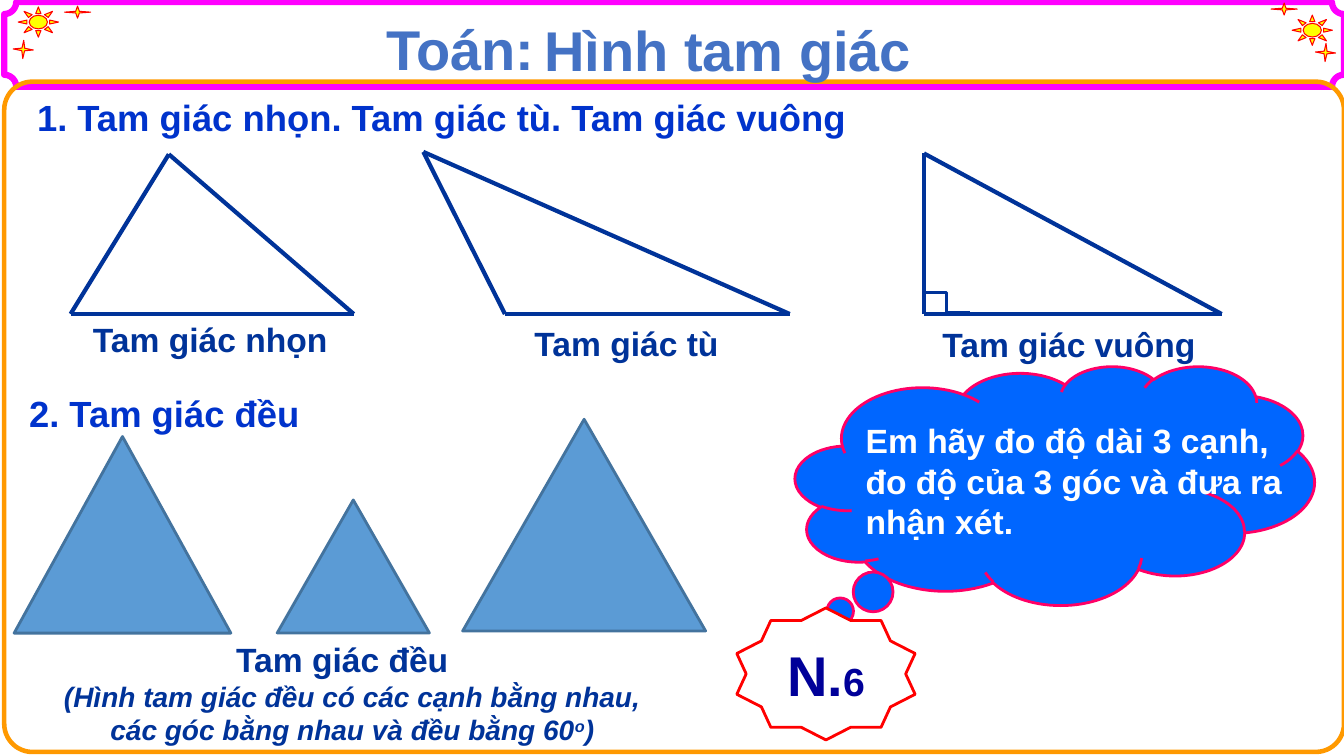
"""Build the geometry lesson slide on kinds of triangles."""
from dataclasses import dataclass

from lxml.etree import SubElement
from pptx import Presentation
from pptx.dml.color import RGBColor
from pptx.enum.shapes import MSO_CONNECTOR, MSO_SHAPE
from pptx.enum.text import MSO_ANCHOR, MSO_AUTO_SIZE, PP_ALIGN
from pptx.oxml import parse_xml
from pptx.oxml.ns import nsdecls, qn
from pptx.util import Pt


@dataclass(frozen=True)
class Theme:
    font: str = "Arial"
    title: str = "4472C4"
    heading: str = "0033CC"
    ink: str = "003399"
    badge: str = "000099"
    white: str = "FFFFFF"
    frame_top: str = "FF00FF"
    frame_body: str = "FF9900"
    yellow: str = "FFFF00"
    red: str = "FF0000"
    triangle: str = "5B9BD5"
    triangle_edge: str = "43739E"
    cloud: str = "0066FF"
    cloud_edge: str = "FF0066"
    title_size: int = 40
    heading_size: int = 26
    label_size: int = 24
    note_size: int = 20
    digit_size: int = 28


THEME = Theme()
SLIDE_SIZE = (960, 540)

FRAMES = [
    (MSO_SHAPE.PLAQUE, (3, 1.5, 957, 60.5), 0.142, THEME.frame_top, 4.5),
    (MSO_SHAPE.ROUNDED_RECTANGLE, (3, 58.3, 957, 478.8), 0.042, THEME.frame_body, 3.25),
]
SPARKLES = [
    (MSO_SHAPE.STAR_4_POINT, (913, -2.9, 8.6, 18.7), 0.1, 270),
    (MSO_SHAPE.STAR_4_POINT, (939.6, 31, 14.4, 13), 0.1, 183),
    (MSO_SHAPE.SUN, (923, 10.8, 28.8, 21.6), 0.274, 0),
    (MSO_SHAPE.STAR_4_POINT, (51.1, -0.7, 8.6, 18.7), 0.1, 270),
    (MSO_SHAPE.STAR_4_POINT, (9.4, 28.8, 14.4, 13), 0.1, 183),
    (MSO_SHAPE.SUN, (13, 5, 28.8, 21.6), 0.274, 0),
]
TITLES = [
    ("Toán:", (266.4, 7.2, 124.6, 55.4)),
    ("Hình tam giác", (380.2, 7.9, 279.4, 55.4)),
]
HEADINGS = [
    ("1. Tam giác nhọn. Tam giác tù. Tam giác vuông", (19.4, 54.7, 604.8, 43.9)),
    ("2. Tam giác đều", (13.7, 266.4, 211.7, 48.2)),
]
OUTLINE_TRIANGLES = [
    [(50.4, 224.3), (120.6, 110.2), (252.7, 224.3)],
    [(360.7, 224.3), (302.4, 108.5), (564.1, 224.3)],
    [(660, 224.3), (660, 109.6), (872.6, 224.3)],
]
RIGHT_ANGLE_MARK = [(659.5, 208.8), (692.6, 223.6)]
LABEL_SIZE = (238.3, 36)
LABELS = [
    ("Tam giác nhọn", 31, 224.6),
    ("Tam giác tù", 328.3, 226.8),
    ("Tam giác vuông", 644.4, 228.2),
    ("Tam giác đều", 125.3, 452.9),
]
EQUILATERALS = [(10.1, 311.8, 154.8, 140.4), (198, 357.1, 108.7, 95), (330.5, 299.5, 173.5, 151.2)]
CLOUD_BOX = (568.1, 261.4, 370.8, 170.6)
QUESTION = ("Em hãy đo độ dài 3 cạnh, đo độ của 3 góc và đưa ra nhận xét.", (611.3, 296.6, 321.8, 94.3))
BADGE_BOX = (526.3, 434.2, 127.4, 94.3)
BADGE_RUNS = [("N.", THEME.title_size), ("6", THEME.digit_size)]
NOTE_BOX = (32.4, 481.7, 438.5, 55.4)
NOTE_RUNS = [
    ("(Hình tam giác đều có các cạnh bằng nhau, các góc bằng nhau và đều bằng 60", THEME.note_size),
    ("o", THEME.note_size),
    (")", THEME.note_size),
]


def points(values):
    return [Pt(value) for value in values]


def add_figure(slide, kind, box, line, width, fill=None, adjustments=(), rotation=0):
    shape = slide.shapes.add_shape(kind, *points(box))
    shape.shadow.inherit = False
    shape.rotation = rotation
    for index, value in enumerate(adjustments):
        shape.adjustments[index] = value
    if fill:
        shape.fill.solid()
        shape.fill.fore_color.rgb = RGBColor.from_string(fill)
    else:
        shape.fill.background()
    shape.line.color.rgb = RGBColor.from_string(line)
    shape.line.width = Pt(width)
    return shape


def add_line(slide, start, end, width, kind=MSO_CONNECTOR.STRAIGHT):
    connector = slide.shapes.add_connector(kind, *points(start + end))
    connector.line.color.rgb = RGBColor.from_string(THEME.ink)
    connector.line.width = Pt(width)
    SubElement(connector.element.spPr, qn("a:effectLst"))


def write_runs(paragraph, runs, color, italic=False):
    for text, size in runs:
        run = paragraph.add_run()
        run.text = text
        run.font.name = THEME.font
        run.font.size = Pt(size)
        run.font.bold = True
        run.font.italic = italic
        run.font.color.rgb = RGBColor.from_string(color)


def add_text(slide, box, runs, color, align=PP_ALIGN.CENTER, wrap=True, italic=False):
    text_frame = slide.shapes.add_textbox(*points(box)).text_frame
    text_frame.word_wrap = wrap
    text_frame.auto_size = MSO_AUTO_SIZE.SHAPE_TO_FIT_TEXT
    paragraph = text_frame.paragraphs[0]
    paragraph.alignment = align
    write_runs(paragraph, runs, color, italic)
    return paragraph


def outline_text(run):
    outline = parse_xml(
        f'<a:ln {nsdecls("a")} w="{Pt(0.75)}"><a:solidFill>'
        f'<a:srgbClr val="{THEME.white}"/></a:solidFill></a:ln>'
    )
    run.font._element.insert(0, outline)


def add_header(slide):
    for kind, box, adjustment, color, width in FRAMES:
        add_figure(slide, kind, box, color, width, adjustments=[adjustment])
    for kind, box, adjustment, rotation in SPARKLES:
        add_figure(slide, kind, box, THEME.red, 0.75, THEME.yellow, [adjustment], rotation)
    for text, box in TITLES:
        paragraph = add_text(slide, box, [(text, THEME.title_size)], THEME.title, wrap=False)
        outline_text(paragraph.runs[0])


def add_triangles(slide):
    for text, box in HEADINGS:
        runs = [(text, THEME.heading_size)]
        paragraph = add_text(slide, box, runs, THEME.heading, PP_ALIGN.LEFT, wrap=False)
        paragraph.line_spacing = 1.3
    for corners in OUTLINE_TRIANGLES:
        for start, end in zip(corners, corners[1:] + corners[:1]):
            add_line(slide, start, end, 3)
    add_line(slide, *RIGHT_ANGLE_MARK, 2.25, MSO_CONNECTOR.ELBOW)
    for text, left, top in LABELS:
        add_text(slide, (left, top, *LABEL_SIZE), [(text, THEME.label_size)], THEME.ink)
    for box in EQUILATERALS:
        add_figure(slide, MSO_SHAPE.ISOSCELES_TRIANGLE, box, THEME.triangle_edge, 2, THEME.triangle)
    note = add_text(slide, NOTE_BOX, NOTE_RUNS, THEME.ink, italic=True)
    note.runs[1].font._element.set("baseline", "30000")


def add_question(slide):
    add_figure(slide, MSO_SHAPE.CLOUD_CALLOUT, CLOUD_BOX, THEME.cloud_edge, 2, THEME.cloud, [-0.455, 0.58])
    badge = add_figure(slide, MSO_SHAPE.STAR_10_POINT, BADGE_BOX, THEME.red, 2, THEME.white)
    badge.text_frame.vertical_anchor = MSO_ANCHOR.MIDDLE
    paragraph = badge.text_frame.paragraphs[0]
    paragraph.alignment = PP_ALIGN.CENTER
    write_runs(paragraph, BADGE_RUNS, THEME.badge)
    text, box = QUESTION
    add_text(slide, box, [(text, THEME.label_size)], THEME.white, PP_ALIGN.LEFT)


def main():
    presentation = Presentation()
    presentation.slide_width, presentation.slide_height = points(SLIDE_SIZE)
    slide = presentation.slides.add_slide(presentation.slide_layouts[6])
    add_header(slide)
    add_triangles(slide)
    add_question(slide)
    presentation.save("out.pptx")


if __name__ == "__main__":
    main()
